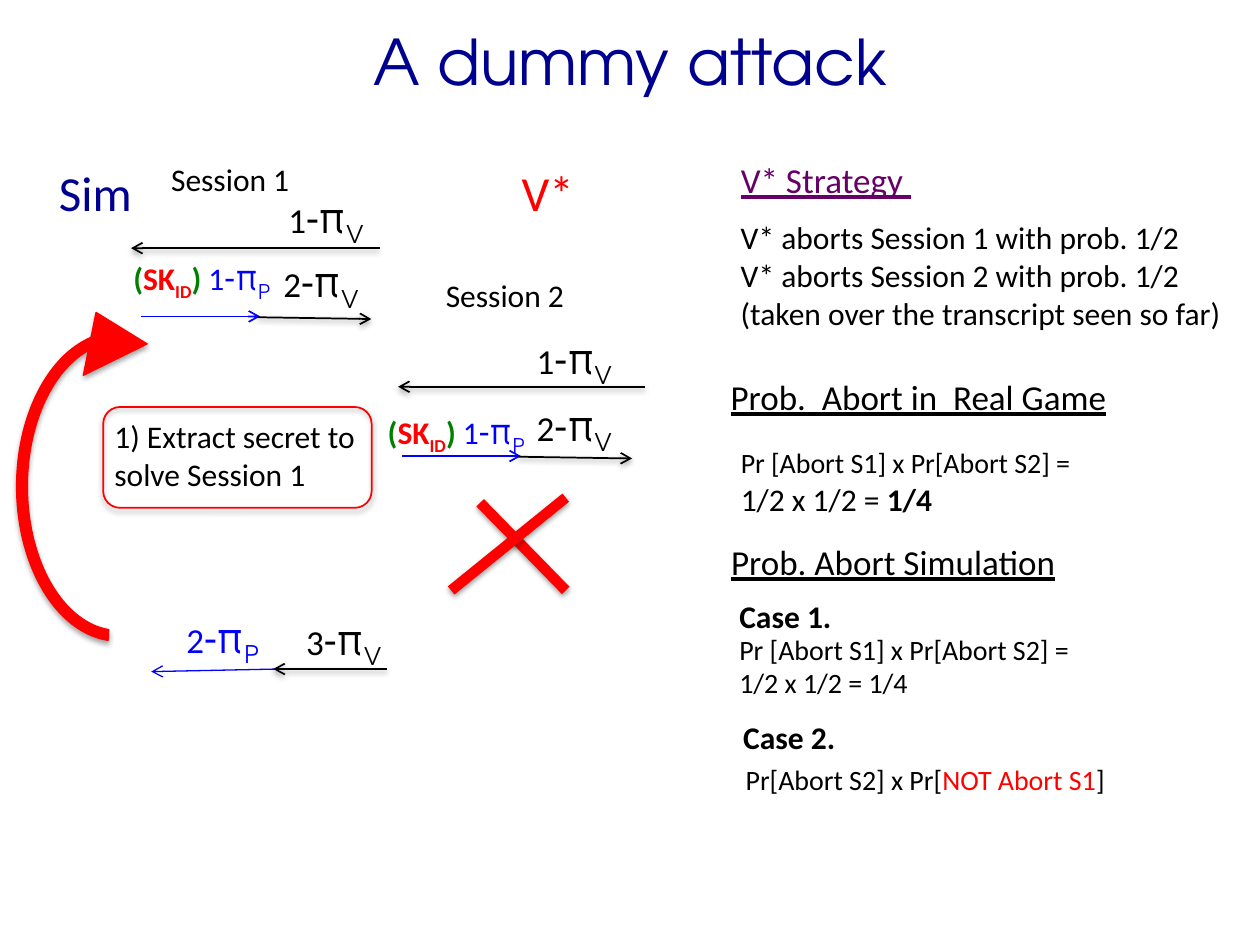
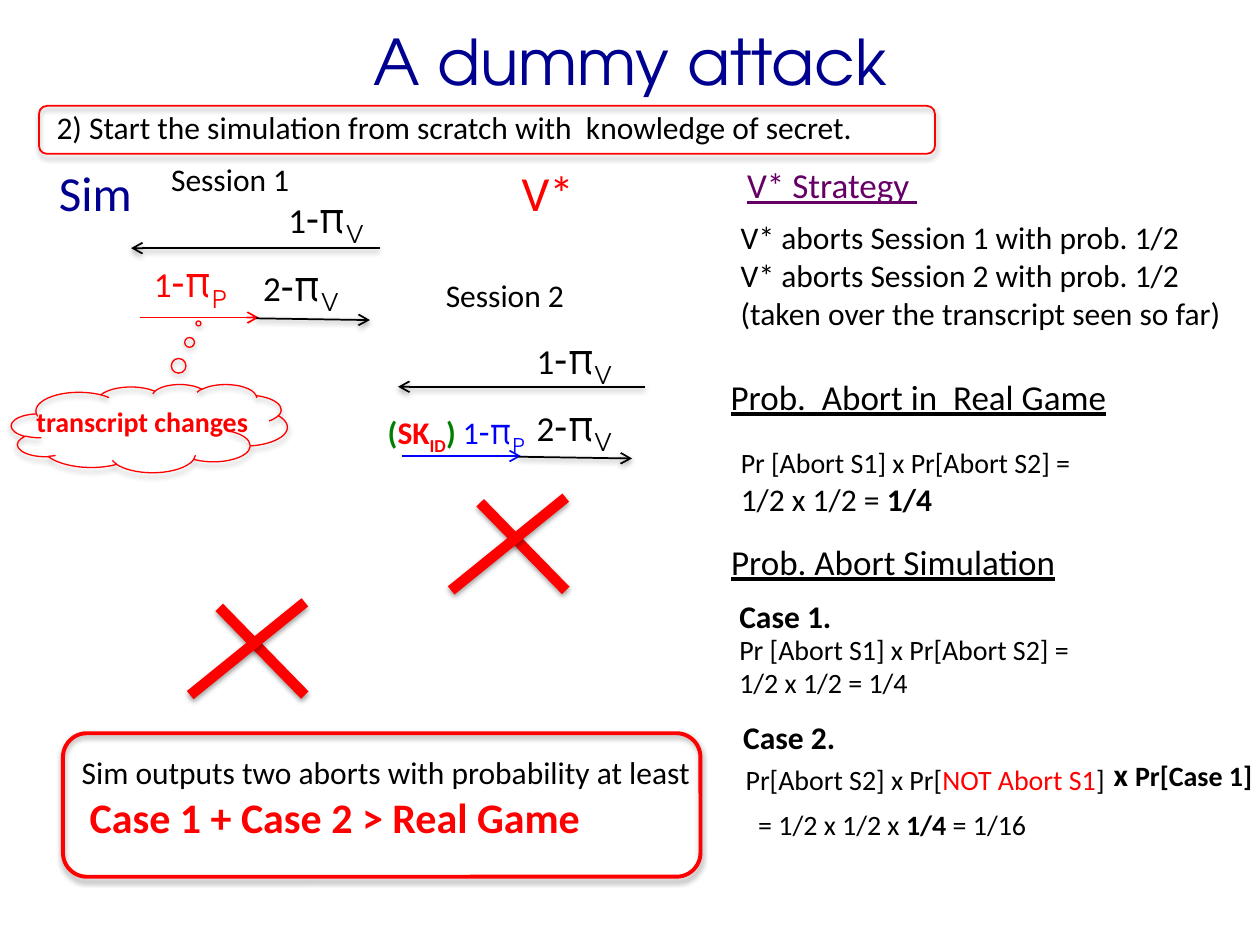
from lxml.etree import SubElement
from pptx import Presentation
from pptx.dml.color import RGBColor
from pptx.enum.shapes import MSO_CONNECTOR as Connector, MSO_SHAPE as Preset
from pptx.enum.text import MSO_ANCHOR as Anchor, MSO_AUTO_SIZE as AutoSize, PP_ALIGN as Align
from pptx.oxml.ns import qn
from pptx.util import Pt

COLORS = {"black": "000000", "navy": "000090", "red": "FF0000", "blue": "0000FF",
          "green": "008000", "purple": "660066"}
BODY, DISPLAY = "Calibri", "TeX Gyre Adventor"


def color(name):
    return RGBColor.from_string(COLORS[name])


def run(text, size=18, ink="black", font=BODY, bold=False, underline=False, sub=False):
    return dict(text=text, size=size, ink=ink, font=font,
                bold=bold, underline=underline, sub=sub)


def add_run(paragraph, text, size, ink, font, bold, underline, sub):
    part = paragraph.add_run()
    part.text = text
    part.font.size = Pt(size)
    part.font.name = font
    part.font.bold = bold
    part.font.underline = underline
    part.font.color.rgb = color(ink)
    if sub:
        part.font._element.set("baseline", "-25000")


def add_text(slide, box, *paragraphs, wrap=True, align=Align.LEFT, anchor=Anchor.TOP):
    """Each paragraph is a list of runs."""
    shape = slide.shapes.add_textbox(*map(Pt, box))
    frame = shape.text_frame
    frame.word_wrap = wrap
    frame.vertical_anchor = anchor
    if anchor == Anchor.TOP:
        frame.auto_size = AutoSize.SHAPE_TO_FIT_TEXT
    for index, runs in enumerate(paragraphs):
        paragraph = frame.paragraphs[0] if index == 0 else frame.add_paragraph()
        paragraph.alignment = align
        for item in runs:
            add_run(paragraph, **item)


def set_shadow(shape, visible=True, opacity=38, distance=1.57):
    effects = SubElement(shape._element.spPr, qn("a:effectLst"))
    if visible:
        shadow = SubElement(effects, qn("a:outerShdw"), blurRad=str(Pt(3.15)),
                            dist=str(Pt(distance)), dir="5400000", rotWithShape="0")
        shade = SubElement(shadow, qn("a:srgbClr"), val=COLORS["black"])
        SubElement(shade, qn("a:alpha"), val=str(opacity * 1000))


def add_line(slide, start, end, ink="black", width=1, arrow=True, shadow=True):
    line = slide.shapes.add_connector(Connector.STRAIGHT, *map(Pt, (*start, *end)))
    line.line.color.rgb = color(ink)
    line.line.width = Pt(width)
    if arrow:
        SubElement(line.line._get_or_add_ln(), qn("a:tailEnd"), type="arrow")
    set_shadow(line, shadow)


def add_outline(slide, preset, box, width=1, filled=False, adjustments=()):
    shape = slide.shapes.add_shape(preset, *map(Pt, box))
    for index, value in enumerate(adjustments):
        shape.adjustments[index] = value
    if filled:
        shape.fill.solid()
        shape.fill.fore_color.rgb = color("red")
    else:
        shape.fill.background()
    shape.line.color.rgb = color("red")
    shape.line.width = Pt(width)
    set_shadow(shape, opacity=35, distance=1.81)
    return shape


# Protocol messages
def message(number, party, ink="black", size=20, symbol_size=24):
    return [run(number, size, ink), run("-", symbol_size, ink),
            run("π", symbol_size, ink, DISPLAY),
            run(party, symbol_size, ink, DISPLAY, sub=True)]


def keyed_message():
    return [run("(", ink="green", bold=True), run("SK", ink="red", bold=True),
            run("ID", ink="red", bold=True, sub=True), run(") ", ink="green", bold=True),
            *message("1", "P", "blue", 18, 20)]


def add_message(slide, position, runs):
    add_text(slide, (*position, 63, 35), runs, wrap=False)


def add_session(slide, box, name, name_at, opening_at, answer, answer_at,
                follow_at, answer_line, answer_ink="blue"):
    """Opening message to the left, then an answer and a follow-up to the right."""
    left, top, width, height = box

    def at(offset):
        return left + offset[0], top + offset[1]

    add_text(slide, (*at(name_at), 98.6, 29.5), [run(name)])
    add_message(slide, at(opening_at), message("1", "V"))
    add_message(slide, at(follow_at), message("2", "V"))
    add_text(slide, (*at(answer_at), 98.6, 31.7), answer, wrap=False)
    add_line(slide, (left + width, top), (left, top))
    x, y = answer_line
    add_line(slide, at((x, y)), at((x + 68, y)), answer_ink, shadow=False)
    add_line(slide, at((x + 66.5, height - 1)), at((x + 131.5, height)))


def add_second_session(slide):
    add_session(slide, (227.5, 221, 141, 41), "Session 2", (20.2, -67), (72, -34.6),
                keyed_message(), (-13, 9.4), (72, 3.6), (2.2, 39.6))


def add_closing_exchange(slide, left, top):
    add_message(slide, (left + 13, top), message("2", "P", "blue"))
    add_message(slide, (left + 81.4, top + 1.4), message("3", "V"))
    add_line(slide, (left + 73.5, top + 36.7), (left, top + 38.2), "blue", 0.75, shadow=False)
    add_line(slide, (left + 134.6, top + 36.7), (left + 69.8, top + 36.7))


def add_cross(slide, left, top, width=65.5, height=53):
    for start, end in (((16.6, 2.9), (width, height)), ((width, 0), (0, height))):
        add_line(slide, (left + start[0], top + start[1]), (left + end[0], top + end[1]),
                 "red", 6, arrow=False)


# Parts shared by both slides
def add_header(slide, left, top, width):
    add_text(slide, (left, top, width, 69), [run("A dummy attack", 36, "navy", DISPLAY)],
             align=Align.CENTER, anchor=Anchor.MIDDLE)
    add_text(slide, (left - 9.4, top + 89.3, 72, 41), [run("Sim", 28, "navy")])
    add_text(slide, (left + 255, top + 89.3, 50, 41), [run("V*", 28, "red")])


def add_analysis(slide, left, top, strategy_at):
    product = "Pr [Abort S1] x Pr[Abort S2] = "
    entries = [
        (*strategy_at, 190, [[run("V* Strategy ", 20, "purple", underline=True)]]),
        (5.8, 34, 304, [[run("V* aborts Session 1 with prob. 1/2")],
                        [run("V* aborts Session 2 with prob. 1/2")],
                        [run("(taken over the transcript seen so far)")]]),
        (0, 124, 244, [[run("Prob.  Abort in  Real Game", 20, underline=True)]]),
        (5.8, 164.3, 207, [[run(product, 16), run("1/2 x 1/2 = "), run("1/4", bold=True)]]),
        (0.3, 218.3, 244, [[run("Prob. Abort Simulation", 20, underline=True)]]),
        (5, 250.7, 68, [[run("Case 1.", bold=True)]]),
        (5, 270.8, 207, [[run(product + "1/2 x 1/2 = 1/4", 16)]]),
        (7.2, 319.8, 68, [[run("Case 2.", bold=True)]]),
        (8.6, 345, 328, [[run("Pr[Abort S2] x Pr[", 16), run("NOT Abort S1", 16, "red"),
                          run("]", 16)]]),
    ]
    for x, y, width, paragraphs in entries:
        add_text(slide, (left + x, top + y, width, 29), *paragraphs)


# Red callouts
def add_extraction_note(slide, left, top, width, height):
    add_text(slide, (left - 0.7, top + 2.2, 161.3, 51),
             [run("1) Extract secret to solve Session 1")])
    add_outline(slide, Preset.ROUNDED_RECTANGLE, (left, top, width, height))


def add_rewind_arrow(slide, box):
    arrow = add_outline(slide, Preset.CIRCULAR_ARROW, box, 0.75, True,
                        (0.042, 13.688, 209.168, 110.305, 0.125))
    arrow.rotation = 270


def add_restart_note(slide, left, top, width, height):
    add_outline(slide, Preset.ROUNDED_RECTANGLE, (left, top, width, height))
    add_text(slide, (left + 2.9, top - 2.2, width - 3.6, 29),
             [run("2) Start the simulation from scratch with  knowledge of secret.")])


def add_transcript_cloud(slide, left, top, width, height):
    add_text(slide, (left + 7.2, top + 8, width, 26.6),
             [run("transcript changes", 16, "red", bold=True)])
    add_outline(slide, Preset.CLOUD_CALLOUT, (left, top, width, height), 0.75,
                adjustments=(0.178, -1.19))


def add_conclusion(slide, left, top, width, height):
    add_text(slide, (left + 3.6, top + 8, width + 3, 58),
             [run("Sim outputs two aborts with probability at least")],
             [run(" ", 20), run("Case 1 + Case 2 > Real Game", 24, "red", bold=True)])
    add_outline(slide, Preset.ROUNDED_RECTANGLE, (left, top, width, height), 2.25)


def add_case_two_result(slide, left, top):
    add_text(slide, (left + 203, top, 99.4, 29),
             [run("x ", bold=True), run("Pr[Case 1]", 16, bold=True)])
    add_text(slide, (left, top + 30.2, 203, 26.6),
             [run("= 1/2 x 1/2 x ", 16), run("1/4", 16, bold=True), run(" = 1/16", 16)])


def build_extraction_slide(slide):
    add_header(slide, 36, 0, 648)
    add_analysis(slide, 410.4, 87, (5.8, 0))
    add_session(slide, (74.9, 141.8, 142, 40.5), "Session 1", (15.8, -54), (82.8, -36),
                keyed_message(), (-5.8, 0.8), (79.9, 0.8), (5.8, 39))
    add_second_session(slide)
    add_cross(slide, 257.8, 284.4)
    add_closing_exchange(slide, 86.4, 345.6)
    add_rewind_arrow(slide, (-36, 204.5, 207.4, 146.9))
    add_extraction_note(slide, 59, 232.6, 153.4, 57.6)


def build_restart_slide(slide):
    add_header(slide, 36, 0, 648)
    add_analysis(slide, 410.4, 87, (9.4, 3))
    add_session(slide, (74.9, 141.8, 142, 41.1), "Session 1", (15.8, -54), (82.8, -36),
                message("1", "P", "red"), (6, 0.8), (68.4, 2.9), (5, 39.7), "red")
    add_second_session(slide)
    add_cross(slide, 257.8, 284.4)
    add_cross(slide, 108.7, 344.2)
    add_restart_note(slide, 22.3, 60.5, 512, 27.4)
    add_case_two_result(slide, 426.2, 427.7)
    add_conclusion(slide, 36, 419, 364.3, 82)
    add_transcript_cloud(slide, 6.5, 219.6, 157.7, 50.4)


def main():
    presentation = Presentation()
    presentation.slide_width, presentation.slide_height = Pt(720), Pt(540)
    for build in (build_extraction_slide, build_restart_slide):
        build(presentation.slides.add_slide(presentation.slide_layouts[6]))
    presentation.save("out.pptx")


if __name__ == "__main__":
    main()
